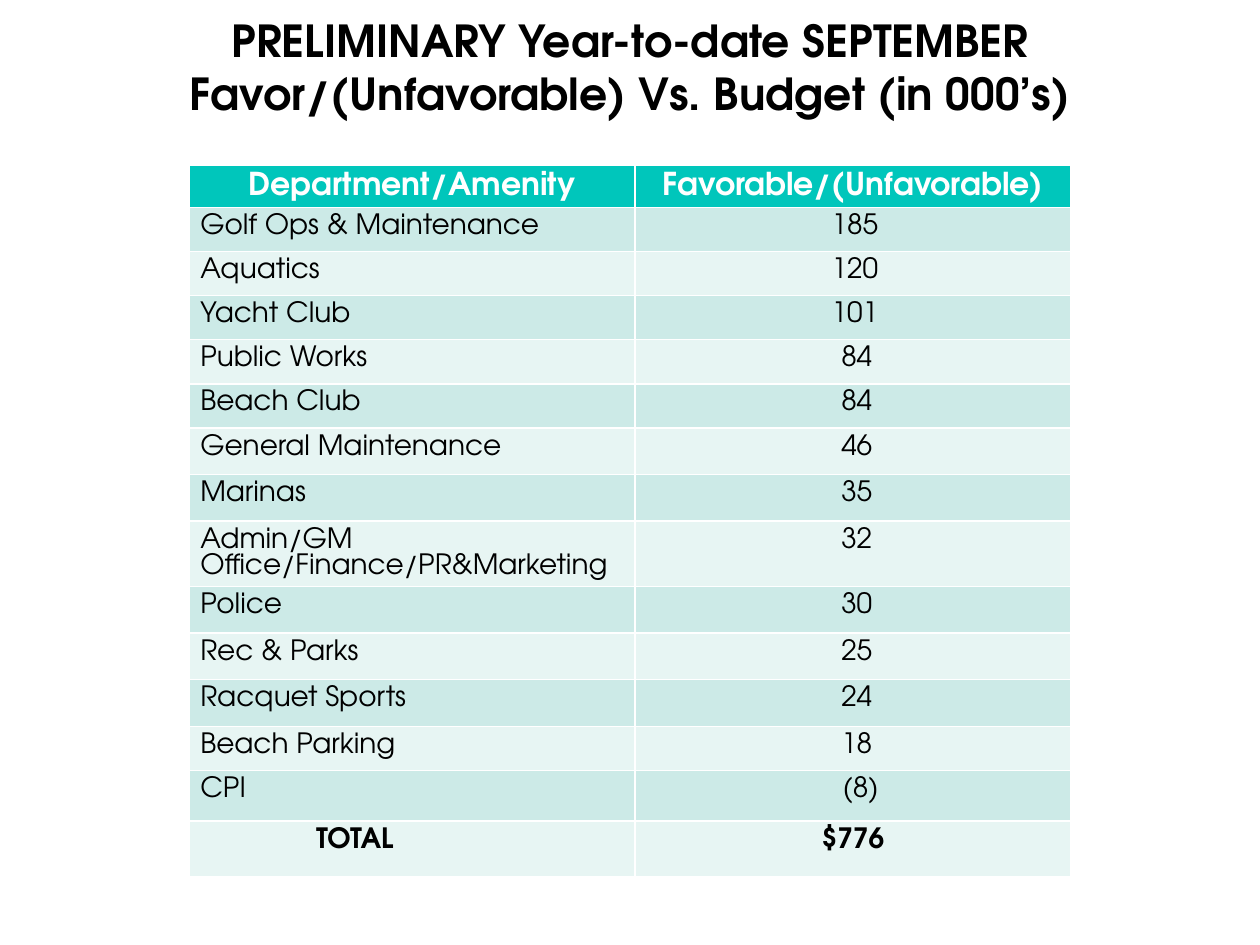
"""Build the September budget variance slide with its department table."""
from dataclasses import dataclass

from lxml import etree
from pptx import Presentation
from pptx import util as u
from pptx.dml.color import RGBColor
from pptx.enum import text
from pptx.oxml.ns import qn

FONT = "TeX Gyre Adventor"
BLACK, WHITE, TEAL = "000000", "FFFFFF", "00C6BB"
BANDS = ("CCEAE7", "E7F5F3")
CENTER, LEFT = text.PP_ALIGN.CENTER, text.PP_ALIGN.LEFT
TITLE = "PRELIMINARY Year-to-date SEPTEMBER\vFavor/(Unfavorable) Vs. Budget (in 000’s)"


@dataclass
class Row:
    name: str
    amount: str
    height: float
    name_indent: float = 0
    amount_indent: float = 0.06
    bold: bool = False


ROWS = [
    Row("Golf Ops & Maintenance", "185", 0.35, amount_indent=0.03),
    Row("Aquatics", "120", 0.35, amount_indent=0.03),
    Row("Yacht Club", "101", 0.35, amount_indent=0.03),
    Row("Public Works", "84", 0.35),
    Row("Beach Club", "84", 0.35),
    Row("General Maintenance", "46", 0.37),
    Row("Marinas", "35", 0.37),
    Row("Admin/GM Office/Finance/PR&Marketing", "32", 0.52),
    Row("Police", "30", 0.37),
    Row("Rec & Parks", "25", 0.37),
    Row("Racquet Sports", "24", 0.37),
    Row("Beach Parking", "18", 0.35),
    Row("CPI", "(8)", 0.4, amount_indent=0.12),
    Row("TOTAL", "$776", 0.44, name_indent=0.92, amount_indent=0, bold=True),
]


def rgb(color: str) -> RGBColor:
    return RGBColor.from_string(color)


def style(para, size: float, spacing: float, color: str, bold: bool, align) -> None:
    para.alignment = align
    para.line_spacing = u.Pt(spacing)
    para.space_before = para.space_after = u.Pt(0)
    font = para.font
    font.name, font.size, font.bold = FONT, u.Pt(size), bold
    font.color.rgb = rgb(color)


def add_text_shadow(span) -> None:
    effects = etree.SubElement(span.font._element, qn("a:effectLst"))
    shadow = etree.SubElement(effects, qn("a:outerShdw"), blurRad="38100", dist="38100", dir="2700000")
    tint = etree.SubElement(shadow, qn("a:srgbClr"), val=BLACK)
    etree.SubElement(tint, qn("a:alpha"), val="43000")


def write_title(box) -> None:
    box.left, box.top = u.Inches(0), u.Inches(0.5)
    box.width, box.height = u.Inches(10), u.Inches(0.92)
    frame = box.text_frame
    frame.text = TITLE
    frame.auto_size = text.MSO_AUTO_SIZE.NONE
    frame.vertical_anchor = text.MSO_ANCHOR.BOTTOM
    frame.margin_top, frame.margin_bottom = u.Inches(0), u.Inches(0.47)
    para = frame.paragraphs[0]
    style(para, 25.2, 30.3, BLACK, True, CENTER)
    for span in para.runs:
        add_text_shadow(span)


def write_cell(cell, words: str, fill: str, align, indent: float = 0,
               size: float = 16, spacing: float = 15, color: str = BLACK, bold: bool = False) -> None:
    cell.text = words
    cell.fill.solid()
    cell.fill.fore_color.rgb = rgb(fill)
    cell.margin_left = u.Inches(0.09 + indent)
    cell.margin_right = u.Inches(0.09)
    style(cell.text_frame.paragraphs[0], size, spacing, color, bold, align)


def add_budget_table(page) -> None:
    frame = page.shapes.add_table(len(ROWS) + 1, 2, u.Inches(1.5), u.Inches(1.31), u.Inches(7), u.Inches(5.64))
    table = frame.table
    for column, width in zip(table.columns, (3.54, 3.46)):
        column.width = u.Inches(width)
    table.rows[0].height = u.Inches(0.32)
    for index, heading in enumerate(("Department/Amenity", "Favorable/(Unfavorable)")):
        write_cell(table.cell(0, index), heading, TEAL, CENTER, size=18, spacing=17, color=WHITE, bold=True)
    for index, row in enumerate(ROWS, 1):
        table.rows[index].height = u.Inches(row.height)
        fill = BANDS[(index - 1) % 2]
        write_cell(table.cell(index, 0), row.name, fill, LEFT, row.name_indent, bold=row.bold)
        write_cell(table.cell(index, 1), row.amount, fill, CENTER, row.amount_indent, bold=row.bold)


def main() -> None:
    deck = Presentation()
    deck.slide_width, deck.slide_height = u.Inches(10), u.Inches(7.5)
    page = deck.slides.add_slide(deck.slide_layouts[5])
    write_title(page.shapes.title)
    add_budget_table(page)
    deck.save("out.pptx")


if __name__ == "__main__":
    main()
